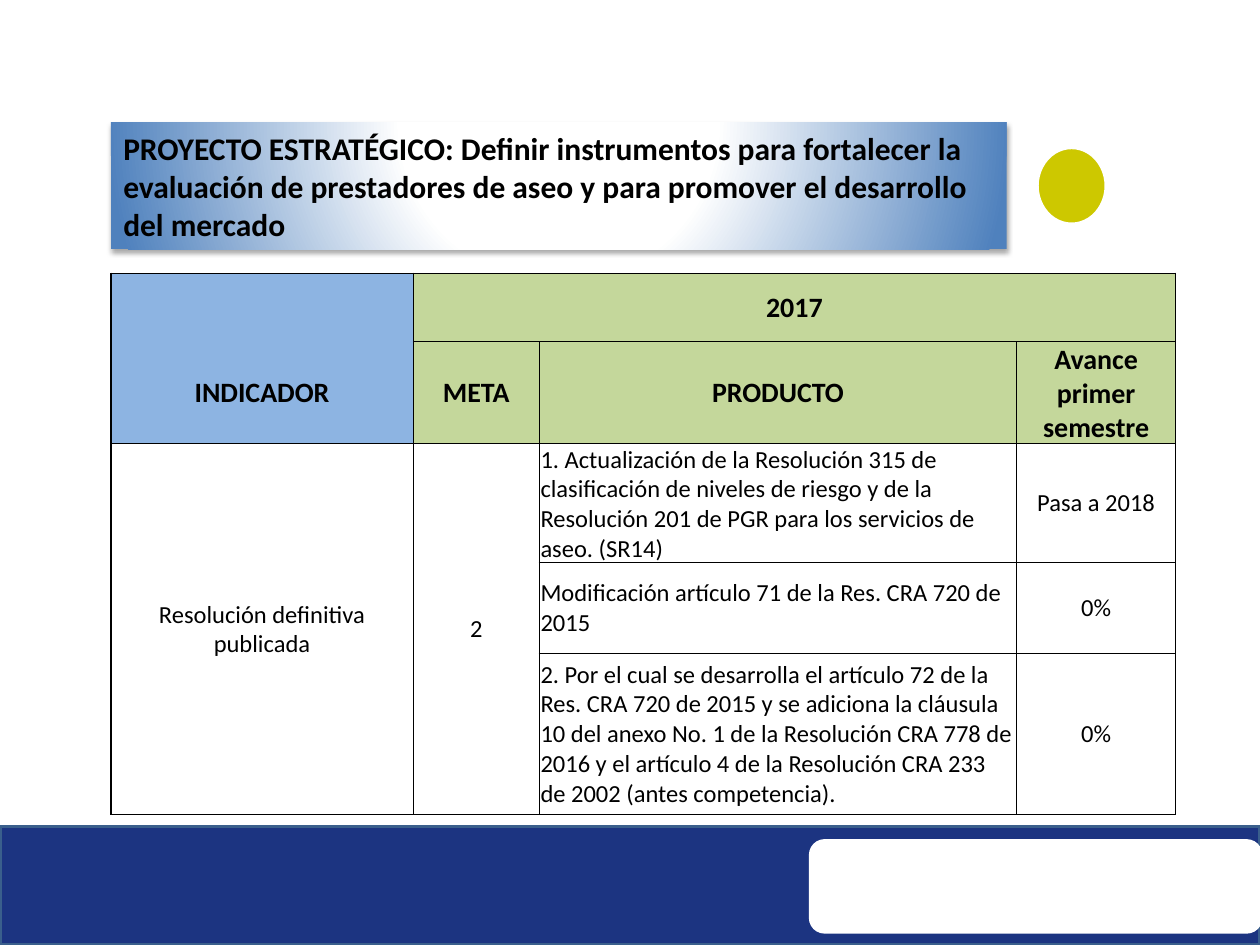
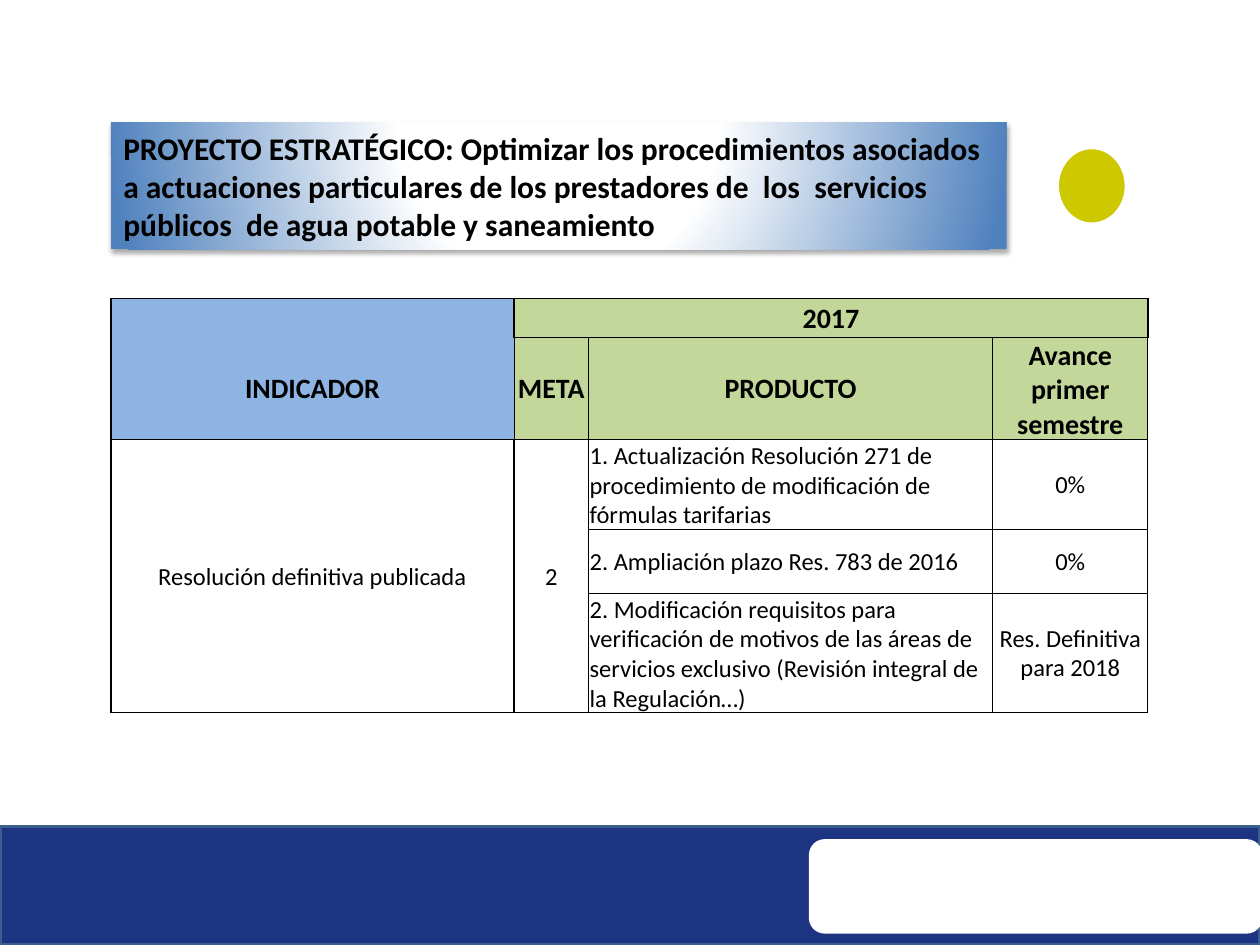
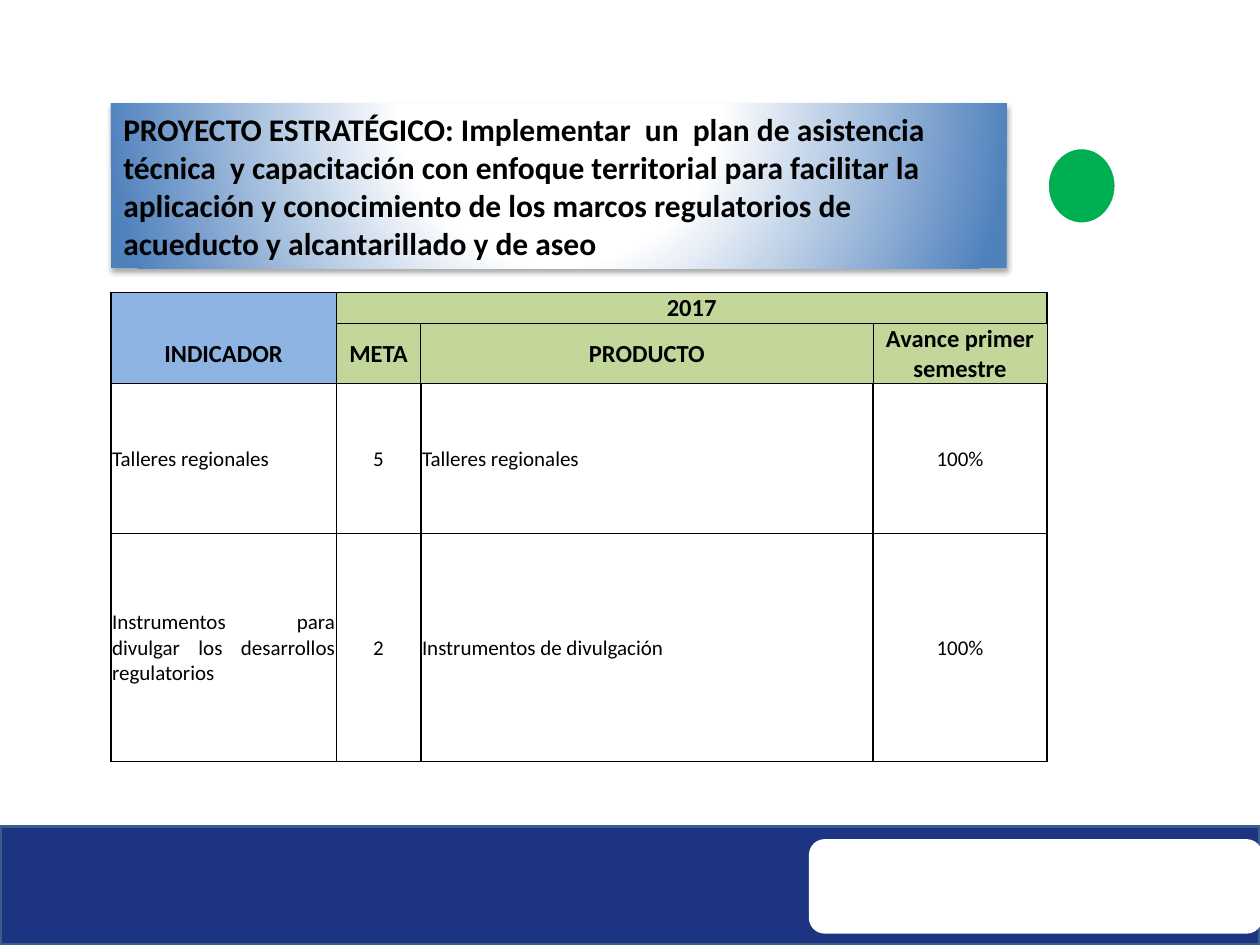
from dataclasses import dataclass

from lxml import etree
from pptx import Presentation
from pptx.dml.color import RGBColor
from pptx.enum.shapes import MSO_SHAPE
from pptx.enum.text import MSO_ANCHOR, MSO_AUTO_SIZE, PP_ALIGN
from pptx.oxml import parse_xml
from pptx.oxml.ns import nsdecls, qn
from pptx.util import Inches, Pt

RECT, ROUND, OVAL = MSO_SHAPE.RECTANGLE, MSO_SHAPE.ROUNDED_RECTANGLE, MSO_SHAPE.OVAL
LEFT, CENTER, JUSTIFY = PP_ALIGN.LEFT, PP_ALIGN.CENTER, PP_ALIGN.JUSTIFY
MIDDLE = MSO_ANCHOR.MIDDLE
GROW = MSO_AUTO_SIZE.SHAPE_TO_FIT_TEXT

WIDTH, HEIGHT = Inches(10), Inches(7.5)
COLS, ROWS = 100, 75  # grid that covers the slide
MARGIN = 8.8
PLAIN_TABLE = "{2D5ABB26-0587-4C30-8999-92F81FD0307C}"


@dataclass(frozen=True)
class Theme:
    font: str = "Calibri"
    ink: str = "000000"
    white: str = "FFFFFF"
    band: str = "1C3481"
    band_line: str = "3A5F8C"
    title_edge: str = "4F81BD"
    indicator: str = "8DB4E2"
    header: str = "C4D79B"
    in_progress: str = "CDC800"
    done: str = "00B050"
    title: int = 18
    head: int = 16
    body: int = 14
    small: int = 12


T = Theme()

# Border widths in points: left, top, right, bottom
THIN, THICK = (0.5,) * 4, (1,) * 4
CORNER = (1, 1, 1, 0)
YEAR = (1, 1, 1, 0.5)
INDICATOR = (1, 0, 0.5, 1)
UNDERLINED = (0.5, 0.5, 0.5, 1)
GOAL = (1, 0.5, 1, 1)


class Deck:
    def __init__(self, theme):
        self.theme = theme
        self.prs = Presentation()
        self.prs.slide_width, self.prs.slide_height = WIDTH, HEIGHT
        self.s = None

    def x(self, cols):
        return round(WIDTH * cols / COLS)

    def y(self, rows):
        return round(HEIGHT * rows / ROWS)

    def box(self, left, top, width, height):
        return self.x(left), self.y(top), self.x(width), self.y(height)

    def slide(self):
        """Start a slide with the footer band."""
        t = self.theme
        self.s = self.prs.slides.add_slide(self.prs.slide_layouts[6])
        self.shape(RECT, (0, 65.6, 100, 9.4), t.band, t.band_line)
        self.shape(ROUND, (64.2, 66.6, 36, 7.5), t.white)

    def shape(self, kind, at, fill=None, line=None):
        sp = self.s.shapes.add_shape(kind, *self.box(*at))
        sp.shadow.inherit = False
        if fill:
            sp.fill.solid()
            sp.fill.fore_color.rgb = RGBColor.from_string(fill)
        else:
            sp.fill.background()
        if line:
            sp.line.color.rgb = RGBColor.from_string(line)
            sp.line.width = Pt(2)
        else:
            sp.line.fill.background()
        return sp

    def label(self, tf, text, size, bold=False, align=LEFT):
        p = tf.paragraphs[0]
        p.alignment = align
        if not text:  # keeps an empty cell from growing its row
            p._p.get_or_add_endParaRPr().set("sz", str(size * 100))
            return
        r = p.add_run()
        r.text = text
        font = {"name": self.theme.font, "size": Pt(size), "bold": bold}
        for key, value in font.items():
            setattr(r.font, key, value)
        r.font.color.rgb = RGBColor.from_string(self.theme.ink)

    def title(self, text, top=9.7, height=10.1):
        t = self.theme
        sp = self.shape(RECT, (MARGIN, top, 71.1, height))
        # Radial gradient and soft shadow
        stops = ((0, t.white), (35, t.white), (100, t.title_edge))
        gs = "".join(f'<a:gs pos="{pos * 1000}"><a:srgbClr val="{color}"/></a:gs>'
                     for pos, color in stops)
        spPr = sp._element.spPr
        spPr.replace(spPr.find(qn("a:noFill")), parse_xml(
            f'<a:gradFill {nsdecls("a")} rotWithShape="1"><a:gsLst>{gs}</a:gsLst>'
            '<a:path path="circle"><a:fillToRect l="50000" t="-80000" r="50000" '
            'b="180000"/></a:path></a:gradFill>'))
        spPr.find(qn("a:effectLst")).append(parse_xml(
            f'<a:outerShdw {nsdecls("a")} blurRad="{Pt(3.1)}" dist="{Pt(1.8)}" '
            f'dir="5400000" rotWithShape="0"><a:srgbClr val="{t.ink}">'
            '<a:alpha val="35000"/></a:srgbClr></a:outerShdw>'))
        tf = sp.text_frame
        for key, value in {"word_wrap": True, "auto_size": GROW,
                           "vertical_anchor": MIDDLE}.items():
            setattr(tf, key, value)
        self.label(tf, f"PROYECTO ESTRATÉGICO: {text}", t.title, True)

    def status(self, left, color):
        self.shape(OVAL, (left, 11.7, 5.5, 6.1), color, self.theme.white)

    def table(self, top, cols, rows, head_size, head_edge):
        """Add a table with its two header rows."""
        t = self.theme
        frame = self.s.shapes.add_table(
            len(rows), len(cols), *self.box(MARGIN, top, sum(cols), sum(rows)))
        tb = frame.table
        tb._tbl.tblPr.find(qn("a:tableStyleId")).text = PLAIN_TABLE
        tb.first_row = tb.horz_banding = False
        for col, width in zip(tb.columns, cols):
            col.width = self.x(width)
        for row, height in zip(tb.rows, rows):
            row.height = self.y(height)
        head = {"size": head_size, "bold": True}
        self.cell(tb, 0, 0, "", CORNER, fill=t.indicator, **head)
        self.cell(tb, 0, 1, "2017", YEAR, fill=t.header, span=(1, 3), **head)
        self.cell(tb, 1, 0, "INDICADOR", INDICATOR, fill=t.indicator, **head)
        names = (("META", head_edge), ("PRODUCTO", UNDERLINED),
                 ("Avance primer semestre", head_edge))
        for c, (name, edge) in enumerate(names, 1):
            self.cell(tb, 1, c, name, edge, fill=t.header, **head)
        return tb

    def cell(self, tb, row, col, text, edge, size, bold=False, align=CENTER,
             fill=None, span=(1, 1)):
        last_row, last_col = row + span[0], col + span[1]
        if span != (1, 1):
            tb.cell(row, col).merge(tb.cell(last_row - 1, last_col - 1))
        for r in range(row, last_row):
            for c in range(col, last_col):
                part = tb.cell(r, c)
                margins = {"left": 0.01, "top": 0.01, "right": 0.01, "bottom": 0}
                for side, inches in margins.items():
                    setattr(part, f"margin_{side}", Inches(inches))
                part.vertical_anchor = MIDDLE
                self.borders(part, edge)
                if fill:
                    part.fill.solid()
                    part.fill.fore_color.rgb = RGBColor.from_string(fill)
                else:
                    part.fill.background()
                shown = text if (r, c) == (row, col) else ""
                self.label(part.text_frame, shown, size, bold, align)

    def borders(self, cell, edge):
        tcPr = cell._tc.get_or_add_tcPr()
        left, top, right, bottom = edge
        for side, width in zip("LRTB", (left, right, top, bottom)):
            ln = etree.SubElement(tcPr, qn(f"a:ln{side}"), w=str(Pt(width)))
            if width:
                paint = etree.SubElement(ln, qn("a:solidFill"))
                etree.SubElement(paint, qn("a:srgbClr"), val=self.theme.ink)
            else:
                etree.SubElement(ln, qn("a:noFill"))

    def resolution_table(self, top, cols, rows, products):
        """One indicator and goal, shared by several products."""
        size = self.theme.body
        tb = self.table(top, cols, rows, self.theme.head, THIN)
        span = (len(products), 1)
        self.cell(tb, 2, 0, "Resolución definitiva publicada", THICK, size, span=span)
        self.cell(tb, 2, 1, "2", GOAL, size, span=span)
        for i, (product, progress) in enumerate(products):
            upper = 1 if i == 0 else 0.5
            lower = 1 if i == len(products) - 1 else 0.5
            self.cell(tb, i + 2, 2, product, (1, upper, 0.5, lower), size, align=LEFT)
            self.cell(tb, i + 2, 3, progress, THIN, size)

    def activity_table(self, top, cols, rows, activities):
        """Each row has its own indicator, goal and product."""
        tb = self.table(top, cols, rows, self.theme.body, UNDERLINED)
        for r, (first_align, *texts) in enumerate(activities, 2):
            aligns = (first_align, CENTER, LEFT, CENTER)
            for c, (text, align) in enumerate(zip(texts, aligns)):
                self.cell(tb, r, c, text, THICK, self.theme.small, align=align)


def main():
    d = Deck(T)

    # Sanitation providers
    d.slide()
    d.title("Definir instrumentos para fortalecer la evaluación de prestadores "
            "de aseo y para promover el desarrollo del mercado")
    d.resolution_table(21.7, (24, 10, 37.9, 12.6), (5.4, 8.1, 9.4, 7.2, 12.8), (
        ("1. Actualización de la Resolución 315 de clasificación de niveles de "
         "riesgo y de la Resolución 201 de PGR para los servicios de aseo. (SR14)",
         "Pasa a 2018"),
        ("Modificación artículo 71 de la Res. CRA 720 de 2015", "0%"),
        ("2. Por el cual se desarrolla el artículo 72 de la Res. CRA 720 de 2015 "
         "y se adiciona la cláusula 10 del anexo No. 1 de la Resolución CRA 778 "
         "de 2016 y el artículo 4 de la Resolución CRA 233 de 2002 "
         "(antes competencia).", "0%"),
    ))
    d.status(82.3, T.in_progress)

    # Procedures for individual cases
    d.slide()
    d.title("Optimizar los procedimientos asociados a actuaciones particulares de "
            "los prestadores de  los  servicios  públicos  de agua potable y "
            "saneamiento")
    d.resolution_table(23.7, (32, 5.9, 32.1, 12.3), (3.1, 8.1, 7.1, 5.1, 9.4), (
        ("1. Actualización Resolución 271 de procedimiento de modificación de "
         "fórmulas tarifarias", "0%"),
        ("2. Ampliación plazo Res. 783 de 2016", "0%"),
        ("2. Modificación requisitos para verificación de motivos de las áreas de "
         "servicios exclusivo (Revisión integral de la Regulación…)",
         "Res. Definitiva para 2018"),
    ))
    d.status(83.9, T.in_progress)

    # Technical assistance and training
    d.slide()
    d.title("Implementar  un  plan de asistencia técnica  y capacitación con "
            "enfoque territorial para facilitar la aplicación y conocimiento de "
            "los marcos regulatorios de acueducto y alcantarillado y de aseo",
            top=8.2, height=13.1)
    d.activity_table(23.2, (17.9, 6.7, 35.9, 13.8), (2.4, 4.8, 11.9, 18.1), (
        (LEFT, "Talleres regionales", "5", "Talleres regionales", "100%"),
        (JUSTIFY, "Instrumentos para divulgar los desarrollos regulatorios", "2",
         "Instrumentos de divulgación", "100%"),
    ))
    d.status(83.1, T.done)

    d.prs.save("out.pptx")


if __name__ == "__main__":
    main()
